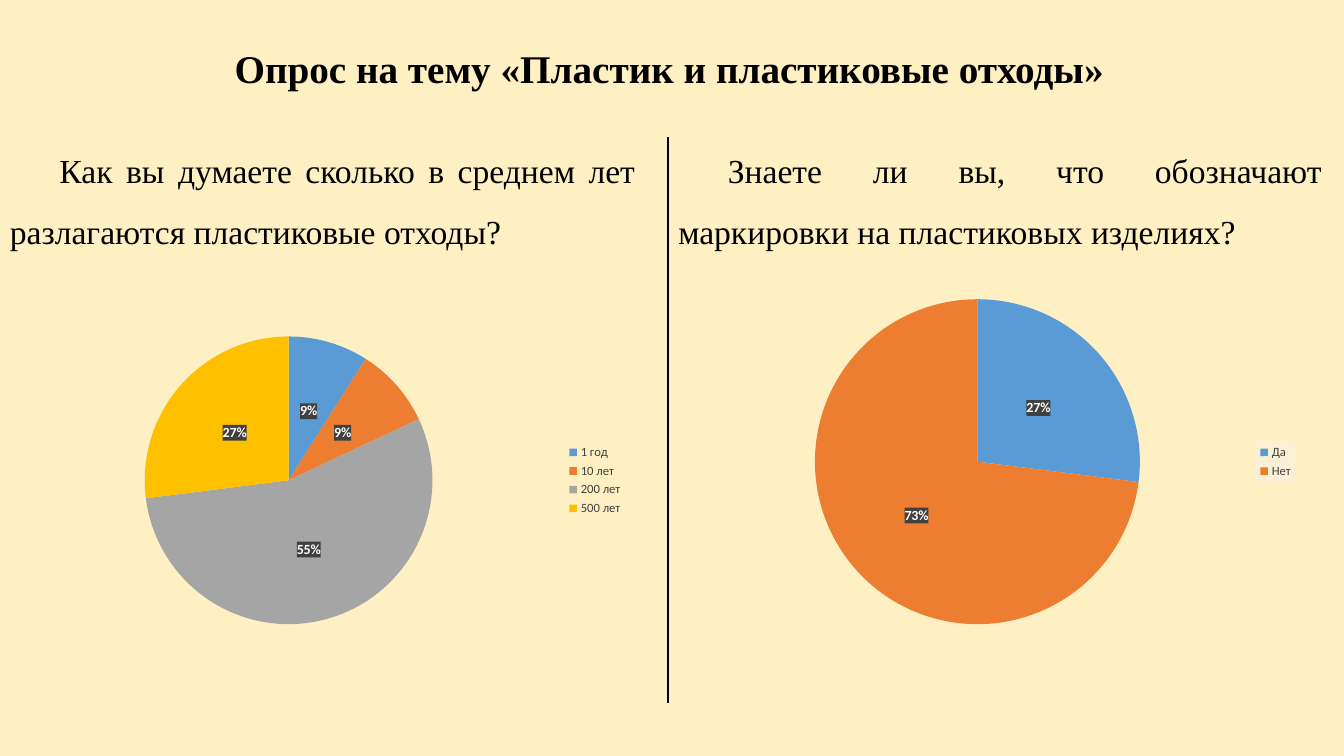
from dataclasses import dataclass

from lxml import etree
from pptx import Presentation
from pptx import util as u
from pptx.chart.data import CategoryChartData
from pptx.dml.color import RGBColor
from pptx.enum import chart as ch, shapes, text
from pptx.oxml import parse_xml
from pptx.oxml.ns import nsdecls, qn


@dataclass(frozen=True)
class Theme:
    back: str = "FFF0C4"
    ink: str = "000000"
    grey: str = "404040"
    pale: str = "F2F2F2"
    white: str = "FFFFFF"
    slices: tuple = ("5B9BD5", "ED7D31", "A5A5A5", "FFC000")
    serif: str = "Times New Roman"
    sans: str = "Calibri"
    head: int = 28
    body: int = 24
    label: int = 10
    key: int = 9


def style(font, name, size, color, bold=False):
    font.name, font.size, font.bold = name, u.Pt(size), bold
    font.color.rgb = RGBColor.from_string(color)


def tint(part, color, alpha):
    """Put a translucent fill behind chart text whose font is already set."""
    fill = parse_xml(
        f'<c:spPr {nsdecls("c", "a")}><a:solidFill><a:srgbClr val="{color}">'
        f'<a:alpha val="{alpha * 1000}"/></a:srgbClr></a:solidFill></c:spPr>')
    part._element.find(qn("c:txPr")).addprevious(fill)


class Deck:
    def __init__(self, theme):
        self.theme = theme
        self.file = Presentation()
        self.file.slide_width, self.file.slide_height = u.Pt(960), u.Pt(540)
        self.slide = self.file.slides.add_slide(self.file.slide_layouts[6])
        fill = self.slide.background.fill
        fill.solid()
        fill.fore_color.rgb = RGBColor.from_string(theme.back)

    def label(self, words, box, size, bold=False, align=text.PP_ALIGN.LEFT,
              anchor=text.MSO_ANCHOR.TOP, space=1.0, indent=0):
        frame = self.slide.shapes.add_textbox(*map(u.Pt, box)).text_frame
        frame.word_wrap = True
        frame.vertical_anchor = anchor
        para = frame.paragraphs[0]
        para.alignment, para.line_spacing = align, space
        if indent:
            para._p.get_or_add_pPr().set("indent", str(u.Pt(indent)))
        run = para.add_run()
        run.text = words
        style(run.font, self.theme.serif, size, self.theme.ink, bold)

    def rule(self, x, top, end):
        line = self.slide.shapes.add_connector(
            shapes.MSO_CONNECTOR.STRAIGHT, *map(u.Pt, (x, top, x, end)))
        line.line.width = u.Pt(1.5)
        line.line.color.rgb = RGBColor.from_string(self.theme.ink)
        etree.SubElement(line._element.spPr, qn("a:effectLst"))

    def pie(self, votes, box, shade=False):
        look = self.theme
        data = CategoryChartData()
        data.categories = list(votes)
        data.add_series("Series 1", list(votes.values()))
        chart = self.slide.shapes.add_chart(
            ch.XL_CHART_TYPE.PIE, *map(u.Pt, box), data).chart
        chart.has_title = False
        style(chart.font, look.sans, look.label, look.ink)

        # Slices
        plot = chart.plots[0]
        plot.vary_by_categories = True
        series = plot.series[0]
        for i, color in enumerate(look.slices[:len(votes)]):
            fill = series.points[i].format.fill
            fill.solid()
            fill.fore_color.rgb = RGBColor.from_string(color)

        # Percent labels
        tags = series.data_labels
        tags.show_percentage, tags.show_value = True, False
        tags.number_format, tags.number_format_is_linked = "0%", False
        tags.position = ch.XL_LABEL_POSITION.CENTER
        style(tags.font, look.sans, look.label, look.white, True)
        tint(tags, look.grey, 90)

        # Legend
        chart.has_legend = True
        chart.legend.position = ch.XL_LEGEND_POSITION.RIGHT
        chart.legend.include_in_layout = False
        style(chart.legend.font, look.sans, look.key, look.grey)
        if shade:
            tint(chart.legend, look.pale, 39)


def main():
    look = Theme()
    deck = Deck(look)

    # Title
    deck.label("Опрос на тему «Пластик и пластиковые отходы»",
               (160.5, 12, 654.5, 77), look.head, bold=True,
               anchor=text.MSO_ANCHOR.MIDDLE, space=0.9)

    # Questions
    middle = 477.4
    for ask, left, width in (
            ("Как вы думаете сколько в среднем лет разлагаются "
             "пластиковые отходы?", 0, 460.8),
            ("Знаете ли вы, что обозначают маркировки на "
             "пластиковых изделиях?", middle, 473.8)):
        deck.label(ask, (left, 89.3, width, 92), look.body,
                   align=text.PP_ALIGN.JUSTIFY, space=1.5, indent=35.4)

    # Divider
    deck.rule(middle, 98, 502)

    # Answers
    deck.pie({"1 год": 9, "10 лет": 9, "200 лет": 55, "500 лет": 27},
             (8.6, 230.4, 443.5, 225.4))
    deck.pie({"Да": 27, "Нет": 73}, (499, 203.8, 432, 252), shade=True)

    deck.file.save("out.pptx")


if __name__ == "__main__":
    main()
